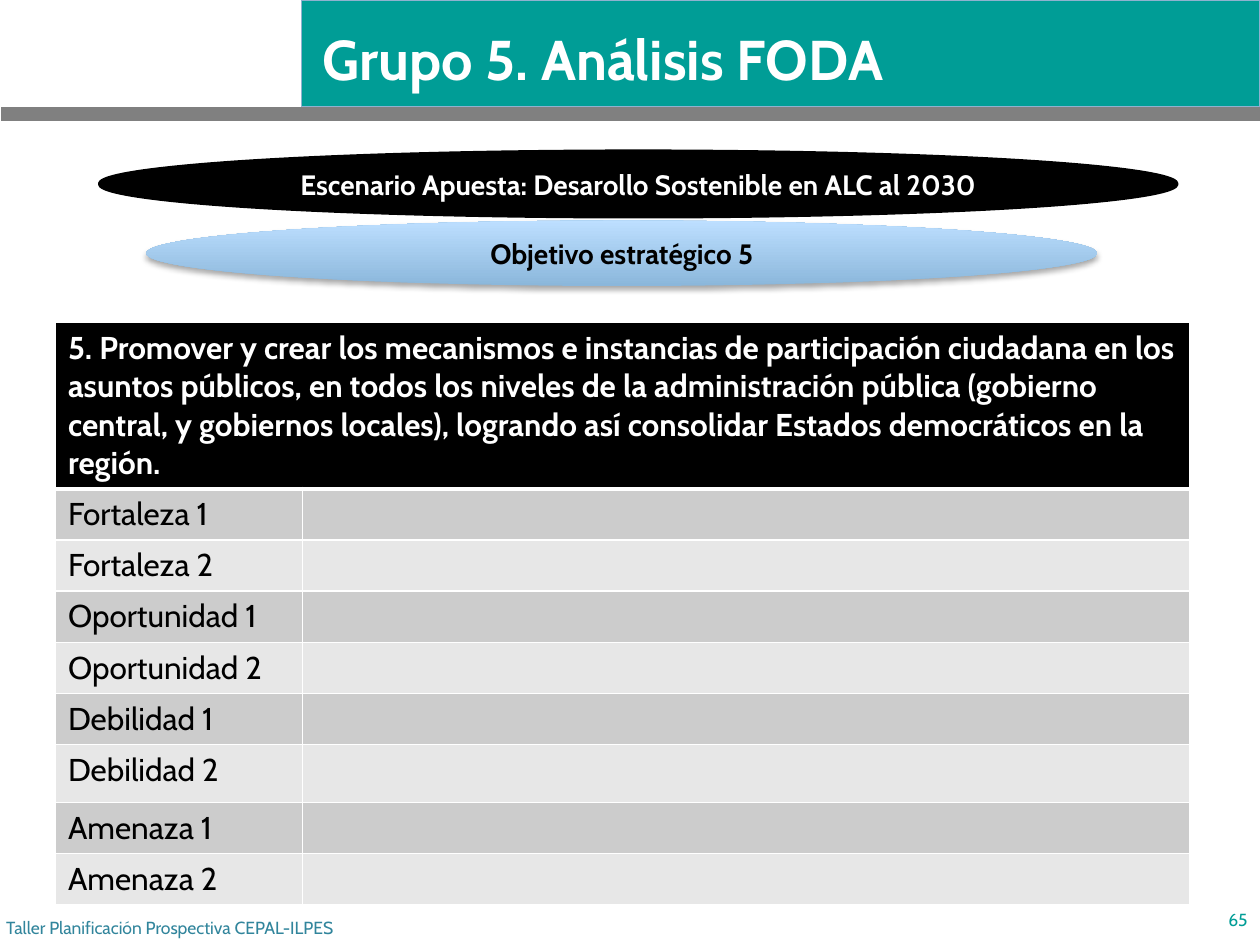
from lxml import etree
from pptx import Presentation
from pptx.dml.color import RGBColor
from pptx.enum.shapes import MSO_SHAPE
from pptx.enum.text import MSO_ANCHOR, PP_ALIGN
from pptx.oxml.ns import qn
from pptx.util import Inches, Pt

RECT, OVAL = MSO_SHAPE.RECTANGLE, MSO_SHAPE.OVAL
MIDDLE = MSO_ANCHOR.MIDDLE
LEFT, CENTER, RIGHT = PP_ALIGN.LEFT, PP_ALIGN.CENTER, PP_ALIGN.RIGHT
W, H = 10, 7.5
FONT = "Cabin"
COLORS = {
    "teal": "009D96", "edge": "8FB2CF", "gray": "808080", "footer": "31859C",
    "black": "000000", "white": "FFFFFF", "dark_band": "CCCCCC",
    "light_band": "E7E7E7", "sky_low": "8BB7DB", "sky_high": "BDDFFF",
}
OBJECTIVE = (
    "5. Promover y crear los mecanismos e instancias de participación ciudadana "
    "en los asuntos públicos, en todos los niveles de la administración pública "
    "(gobierno central, y gobiernos locales), logrando así consolidar Estados "
    "democráticos en la región."
)
FACTORS = [f"{name} {n}" for name in ("Fortaleza", "Oportunidad", "Debilidad", "Amenaza")
           for n in (1, 2)]


def rgb(name):
    return RGBColor.from_string(COLORS[name])


def inches(box):
    return [Inches(v) for v in box]


def write(tf, text, size, color, bold=False, align=LEFT):
    tf.word_wrap = True
    p = tf.paragraphs[0]
    p.alignment = align
    r = p.add_run()
    r.text = text
    for name, value in {"name": FONT, "size": Pt(size), "bold": bold}.items():
        setattr(r.font, name, value)
    r.font.color.rgb = rgb(color)


def add_filled(s, kind, box, fill, line=None, width=0.75):
    sp = s.shapes.add_shape(kind, *inches(box))
    sp.shadow.inherit = False
    sp.fill.solid()
    sp.fill.fore_color.rgb = rgb(fill)
    if line:
        sp.line.color.rgb = rgb(line)
        sp.line.width = Pt(width)
    else:
        sp.line.fill.background()
    return sp


def add_soft_shadow(sp):
    effects = sp._element.spPr.find(qn("a:effectLst"))
    shadow = etree.SubElement(effects, qn("a:outerShdw"), blurRad=str(Pt(3.1)),
                              dist=str(Pt(1.8)), dir="5400000", rotWithShape="0")
    color = etree.SubElement(shadow, qn("a:srgbClr"), val=COLORS["black"])
    etree.SubElement(color, qn("a:alpha"), val="35000")


def set_borders(cell, bottom=1, top=1):
    tcPr = cell._tc.get_or_add_tcPr()
    for side, width in {"L": 1, "R": 1, "T": top, "B": bottom}.items():
        ln = etree.SubElement(tcPr, qn(f"a:ln{side}"), w=str(Pt(width)))
        fill = etree.SubElement(ln, qn("a:solidFill"))
        etree.SubElement(fill, qn("a:srgbClr"), val=COLORS["white"])


def add_header(s, box, text):
    x, y, w, h = box
    rule = 0.11
    band_x, band_h = x + 0.239 * w, h - rule
    add_filled(s, RECT, (band_x, y, x + w - band_x, band_h), "teal", "edge")
    add_filled(s, RECT, (x + 0.01, y + band_h, w, rule), "gray")
    # The title is raised above the bars already drawn
    title = s.shapes.title
    s.shapes._spTree.append(title._element)
    title.left, title.top, title.width, title.height = inches(
        (band_x + 0.07, y - 0.04, 7.41, 1))
    title.text_frame.vertical_anchor = MIDDLE
    write(title.text_frame, text, 32, "white", True)


def add_factor_table(s, box):
    x, y, w, h = box
    head_h, tall_h, tall_row = 1.3, 0.46, 6
    row_h = (h - head_h - tall_h) / (len(FACTORS) - 1)
    frame = s.shapes.add_table(len(FACTORS) + 1, 2, *inches(box))
    table = frame.table
    label_w = 1.96
    for col, width in zip(table.columns, (label_w, w - label_w)):
        col.width = Inches(width)
    for i, row in enumerate(table.rows):
        row.height = Inches(head_h if i == 0 else tall_h if i == tall_row else row_h)
        band = "black" if i == 0 else "dark_band" if i % 2 else "light_band"
        for cell in row.cells:
            set_borders(cell, bottom=3 if i == 0 else 1, top=3 if i == 1 else 1)
            cell.fill.solid()
            cell.fill.fore_color.rgb = rgb(band)
    table.cell(0, 0).merge(table.cell(0, 1))
    write(table.cell(0, 0).text_frame, OBJECTIVE, 18, "white", True)
    for i, factor in enumerate(FACTORS, 1):
        write(table.cell(i, 0).text_frame, factor, 18, "black")


def add_footer(s, box):
    x, y, w, h = box
    number_w = 0.05 * w
    for text, left, top, width, color, align in (
        ("Taller Planificación Prospectiva CEPAL-ILPES", x - 0.05, y + 0.06, 0.598 * w,
         "footer", LEFT),
        ("65", x + w - number_w, y, number_w, "teal", RIGHT),
    ):
        tb = s.shapes.add_textbox(*inches((left, top, width, h)))
        tb.text_frame.vertical_anchor = MIDDLE
        write(tb.text_frame, text, 10, color, align=align)


def add_goals(s, box):
    x, y, w, h = box
    oval_h = 0.52
    scenario = add_filled(s, OVAL, (x, y, w, oval_h), "black", "black", 2)
    write(scenario.text_frame, "Escenario Apuesta: Desarollo Sostenible en ALC al 2030",
          16, "white", True, CENTER)
    goal = add_filled(s, OVAL, (x + 0.37, y + h - oval_h, w - 1, oval_h), "sky_low")
    goal.fill.gradient()
    goal.fill.gradient_angle = 90
    for stop, color in zip(goal.fill.gradient_stops, ("sky_low", "sky_high")):
        stop.color.rgb = rgb(color)
    add_soft_shadow(goal)
    write(goal.text_frame, "Objetivo estratégico 5", 16, "black", True, CENTER)


def main():
    prs = Presentation()
    prs.slide_width, prs.slide_height = Inches(W), Inches(H)
    s = prs.slides.add_slide(prs.slide_layouts[5])
    add_header(s, (0, 0, W, 0.96), "Grupo 5. Análisis FODA")
    add_factor_table(s, (0.44, 2.56, 0.9 * W, 4.6))
    add_footer(s, (0, H - 0.4, W, 0.4))
    add_goals(s, (0.79, 1.2, 8.55, 1.07))
    prs.save("out.pptx")


if __name__ == "__main__":
    main()
